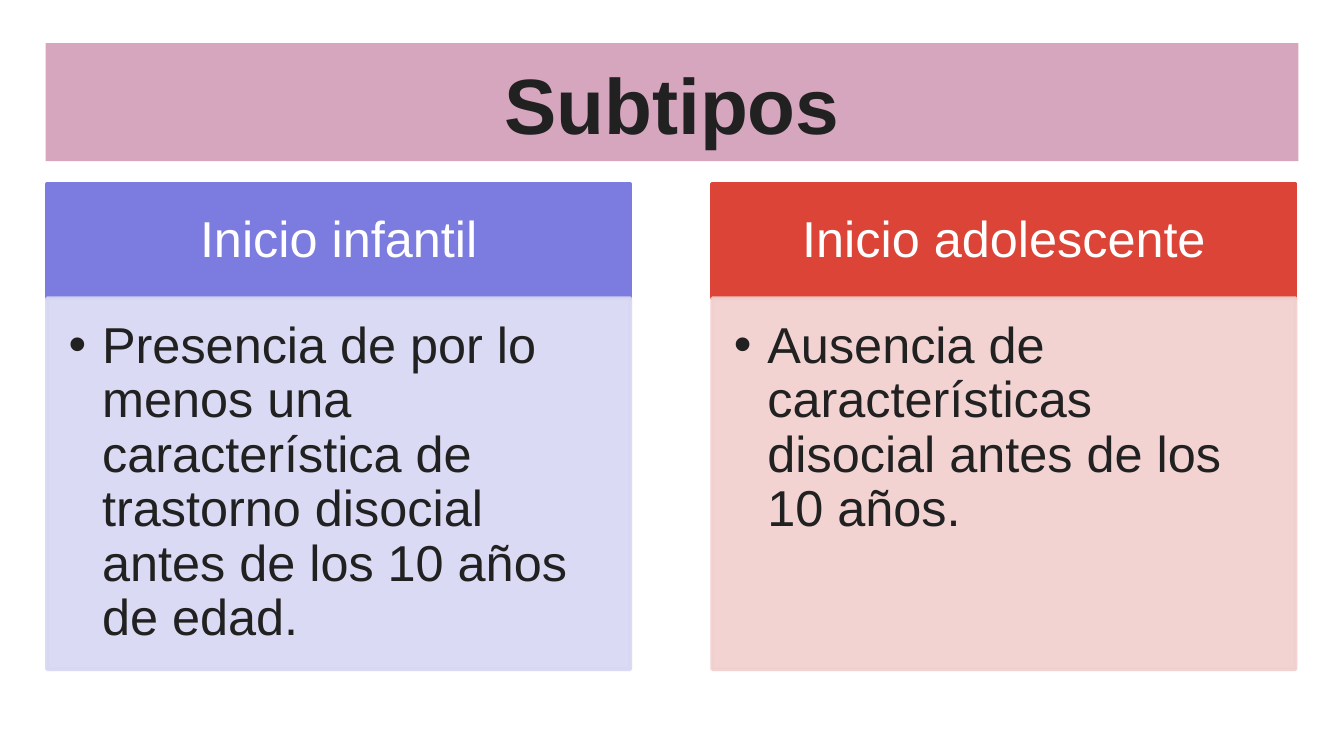
from dataclasses import dataclass

from lxml.etree import SubElement
from pptx import Presentation
from pptx.dml.color import RGBColor
from pptx.enum.text import MSO_ANCHOR, MSO_AUTO_SIZE, PP_ALIGN
from pptx.oxml.ns import qn
from pptx.util import Inches, Pt


@dataclass(frozen=True)
class Theme:
    font: str = "Arial"
    ink: str = "212121"
    light: str = "FFFFFF"
    band: str = "D5A6BD"
    title: int = 42
    text: int = 27
    edge: int = 2
    alpha: int = 90


THEME = Theme()

# Heading, heading colour, body colour, body text
CARDS = [
    ("Inicio infantil", "7C7CE0", "D7D7F3",
     "Presencia de por lo menos una característica de trastorno disocial "
     "antes de los 10 años de edad."),
    ("Inicio adolescente", "DB4437", "F1CFCE",
     "Ausencia de características disocial antes de los 10 años."),
]


def place(shape, box):
    shape.left, shape.top, shape.width, shape.height = map(Inches, box)


def paint(shape, color, edge=True):
    fills = [shape.fill]
    if edge:
        shape.line.width = Pt(THEME.edge)
        fills.append(shape.line.fill)
    for fill in fills:
        fill.solid()
        fill.fore_color.rgb = RGBColor.from_string(color)


def fade(shape):
    """Make fill and outline slightly see-through."""
    for tint in shape._element.spPr.iter(qn("a:srgbClr")):
        SubElement(tint, qn("a:alpha"), val=str(THEME.alpha * 1000))


def write(shape, text, size, color, inset, anchor, align, bold=False):
    frame = shape.text_frame
    frame.text = text
    frame.word_wrap = True
    frame.auto_size = MSO_AUTO_SIZE.NONE
    frame.vertical_anchor = anchor
    (frame.margin_left, frame.margin_top,
     frame.margin_right, frame.margin_bottom) = map(Inches, inset)
    par = frame.paragraphs[0]
    par.alignment = align
    par.space_before = Pt(0)
    par.font.name, par.font.size, par.font.bold = THEME.font, Pt(size), bold
    par.font.color.rgb = RGBColor.from_string(color)
    return par


def bullet(par, indent):
    props = par._p.get_or_add_pPr()
    props.set("marL", str(Inches(indent)))
    props.set("indent", str(-Inches(indent)))
    mark = SubElement(props, qn("a:buChar"), char="•")
    # The bullet has to stand before the font defaults
    props.find(qn("a:defRPr")).addprevious(mark)


def header(shape, box):
    place(shape, box)
    paint(shape, THEME.band, edge=False)
    write(shape, "Subtipos", THEME.title, THEME.ink, [0.1] * 4,
          MSO_ANCHOR.TOP, PP_ALIGN.CENTER, bold=True)


def card(head, body, box, data):
    name, dark, pale, text = data
    left, top, width, height = box
    split = 0.235 * height

    # Heading
    place(head, (left, top, width, split))
    paint(head, dark)
    par = write(head, name, THEME.text, THEME.light, (0.21, 0.12, 0.21, 0.12),
                MSO_ANCHOR.MIDDLE, PP_ALIGN.CENTER)
    par.line_spacing = 0.9

    # Description
    place(body, (left, top + split, width, height - split))
    paint(body, pale)
    fade(body)
    par = write(body, text, THEME.text, THEME.ink, (0.16, 0.16, 0.21, 0.24),
                MSO_ANCHOR.TOP, PP_ALIGN.LEFT)
    par.line_spacing = 0.9
    bullet(par, 0.25)


def main():
    deck = Presentation()
    deck.slide_width = Inches(10)
    deck.slide_height = deck.slide_width * 9 // 16
    slide = deck.slides.add_slide(deck.slide_layouts.get_by_name("Comparison"))
    title, *slots = slide.placeholders

    # Title band
    header(title, (0.34, 0.32, 9.32, 0.88))

    # Two equal columns
    left, wide, gap = 0.35, 4.34, 0.61
    for col, data in enumerate(CARDS):
        head, body = slots[2 * col:2 * col + 2]
        card(head, body, (left + col * (wide + gap), 1.37, wide, 3.61), data)

    deck.save("out.pptx")


if __name__ == "__main__":
    main()
